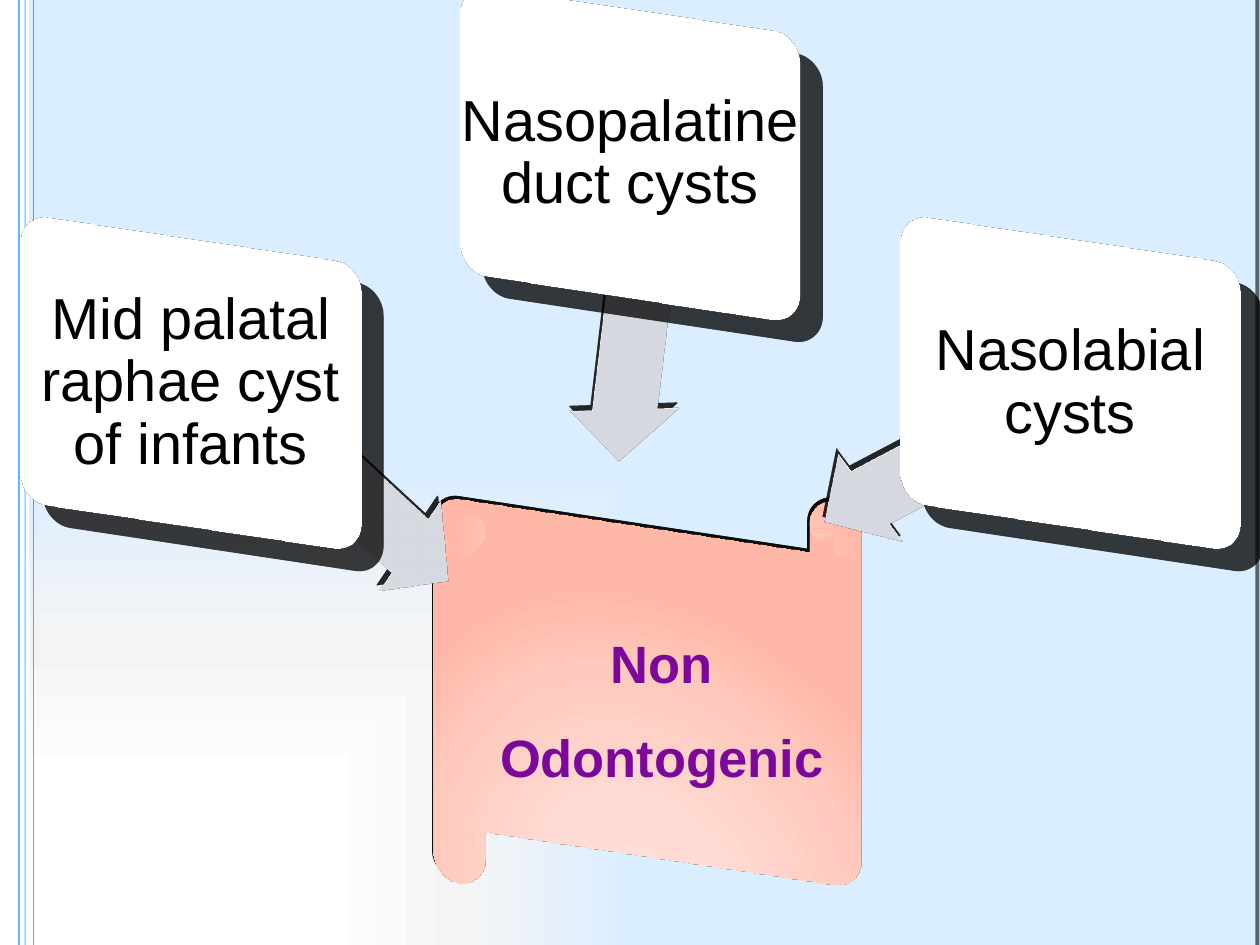
from lxml.etree import SubElement
from pptx import Presentation
from pptx.dml.color import RGBColor
from pptx.enum.shapes import MSO_CONNECTOR, MSO_SHAPE
from pptx.enum.text import MSO_ANCHOR, PP_ALIGN
from pptx.oxml.ns import qn
from pptx.util import Pt

WHITE = RGBColor(0xFF, 0xFF, 0xFF)
BLACK = RGBColor(0, 0, 0)
BLUE = RGBColor(0x61, 0xB6, 0xFF)
SKY = RGBColor(0xDB, 0xEE, 0xFF)
PALE = RGBColor(0xF4, 0xF4, 0xF4)
GREY = RGBColor(0xB2, 0xB5, 0xBB)
EDGE = RGBColor(0xB4, 0xBC, 0xCA)
BROWN = RGBColor(0xB6, 0x68, 0x50)
PURPLE = RGBColor(0x7B, 0x08, 0x9A)
PINKS = [(0, RGBColor(0xFF, 0xDE, 0xD8), 100), (30, RGBColor(0xFF, 0xDB, 0xD4), 100),
         (75, RGBColor(0xFF, 0xC9, 0xBD), 100), (100, RGBColor(0xFF, 0xB7, 0xA7), 100)]


def blend(fill, root, stops, path, box):
    """Fill with a path gradient; stops are place, colour and opacity in percent."""
    fill.gradient()
    grad = next(root.iter(qn("a:gradFill")))
    for part in list(grad):
        grad.remove(part)
    rows = SubElement(grad, qn("a:gsLst"))
    for pos, tint, alpha in stops:
        stop = SubElement(rows, qn("a:gs"), pos=str(pos * 1000))
        clr = SubElement(stop, qn("a:srgbClr"), val=str(tint))
        if alpha < 100:
            SubElement(clr, qn("a:alpha"), val=str(alpha * 1000))
    way = SubElement(grad, qn("a:path"), path=path)
    SubElement(way, qn("a:fillToRect"), {k: str(v * 1000) for k, v in zip("ltrb", box)})


def tilt(shape, alpha, blur, dist, angle):
    """Give a shape its shadow and turn it in space."""
    shape.shadow.inherit = False
    props = shape._element.spPr
    cast = SubElement(props.find(qn("a:effectLst")), qn("a:outerShdw"),
                      blurRad=str(Pt(blur)), dist=str(Pt(dist)),
                      dir=str(angle * 60000), algn="ctr", rotWithShape="0")
    clr = SubElement(cast, qn("a:srgbClr"), val=str(BLACK))
    SubElement(clr, qn("a:alpha"), val=str(alpha * 1000))
    scene = SubElement(props, qn("a:scene3d"))
    SubElement(scene, qn("a:camera"), prst="isometricOffAxis2Left", zoom="95000")
    SubElement(scene, qn("a:lightRig"), rig="flat", dir="t")
    solid = SubElement(props, qn("a:sp3d"), extrusionH=str(Pt(1)), prstMaterial="plastic")
    SubElement(solid, qn("a:bevelT"), w=str(Pt(4)), h=str(Pt(4)))


prs = Presentation()
prs.slide_width, prs.slide_height = Pt(720), Pt(540)
slide = prs.slides.add_slide(prs.slide_layouts[6])
shapes = slide.shapes

# Background
blend(slide.background.fill, slide._element,
      [(34, WHITE, 30), (65, PALE, 100), (100, SKY, 41)], "rect", (0, 100, 100, 0))

# Side band and rules
band = shapes.add_shape(MSO_SHAPE.RECTANGLE, 0, 0, Pt(16.5), Pt(540))
band.fill.solid()
band.fill.fore_color.rgb = WHITE
band.line.fill.background()
band.shadow.inherit = False
for x, tint, width, alpha in [(10.8, BLUE, 1, 100), (14.4, BLUE, 1, 59),
                              (19.2, BLACK, 0.25, 59), (718.5, BLACK, 2.25, 59)]:
    rule = shapes.add_connector(MSO_CONNECTOR.STRAIGHT, Pt(x), 0, Pt(x), Pt(540))
    rule.line.color.rgb = tint
    rule.line.width = Pt(width)
    props = rule._element.spPr
    if alpha < 100:
        clr = next(props.iter(qn("a:srgbClr")))
        SubElement(clr, qn("a:alpha"), val=str(alpha * 1000))
    SubElement(props, qn("a:effectLst"))

# Central scroll
scroll = shapes.add_shape(MSO_SHAPE.HORIZONTAL_SCROLL, Pt(234), Pt(264), Pt(271.5), Pt(263.5))
blend(scroll.fill, scroll._element, PINKS, "circle", (50, 100, 50, 10))
scroll.line.color.rgb = BROWN
scroll.line.width = Pt(0.75)
tilt(scroll, 50, 5, 2, 245)
texts = [("Non Odontogenic", 267, 297.5, 222.5, 198, 1.5, 1.5, 30, PURPLE, True)]

# Cards, each with an arrow behind it
cards = [
    ("Mid palatal raphae cyst of infants", 1, 132.5, (113, 246.25, 171.5), 214.2),
    ("Nasopalatine duct cysts", 252, 1.5, (279.5, 155.5, 167), 268.2),
    ("Nasolabial cysts", 503.5, 132.5, (456, 232.5, 156), 323.7),
]
for words, x, y, (left, top, wide), turn in cards:
    arrow = shapes.add_shape(MSO_SHAPE.LEFT_ARROW, Pt(left), Pt(top), Pt(wide), Pt(65))
    arrow.adjustments[0], arrow.adjustments[1] = 0.6, 0.5
    arrow.rotation = turn
    arrow.fill.solid()
    arrow.fill.fore_color.rgb = GREY
    arrow.line.fill.background()
    tilt(arrow, 60, 4, 3, 245)

    card = shapes.add_shape(MSO_SHAPE.ROUNDED_RECTANGLE, Pt(x), Pt(y), Pt(216), Pt(173))
    card.adjustments[0] = 0.1
    card.fill.solid()
    card.fill.fore_color.rgb = WHITE
    card.line.color.rgb = EDGE
    card.line.width = Pt(1.5)
    tilt(card, 30, 15, 18, 45)
    texts.append((words, x + 5, y + 5, 206, 163, 5, 0.9, 33, BLACK, False))

# Labels
for words, x, y, wide, high, inset, space, size, tint, bold in texts:
    frame = shapes.add_textbox(Pt(x), Pt(y), Pt(wide), Pt(high)).text_frame
    frame.word_wrap = True
    frame.vertical_anchor = MSO_ANCHOR.MIDDLE
    frame.margin_left = frame.margin_right = Pt(inset)
    frame.margin_top = frame.margin_bottom = Pt(inset)
    para = frame.paragraphs[0]
    para.alignment = PP_ALIGN.CENTER
    para.line_spacing = space
    run = para.add_run()
    run.text = words
    run.font.name = "Arial"
    run.font.size = Pt(size)
    run.font.bold = bold
    run.font.color.rgb = tint

prs.save("out.pptx")
